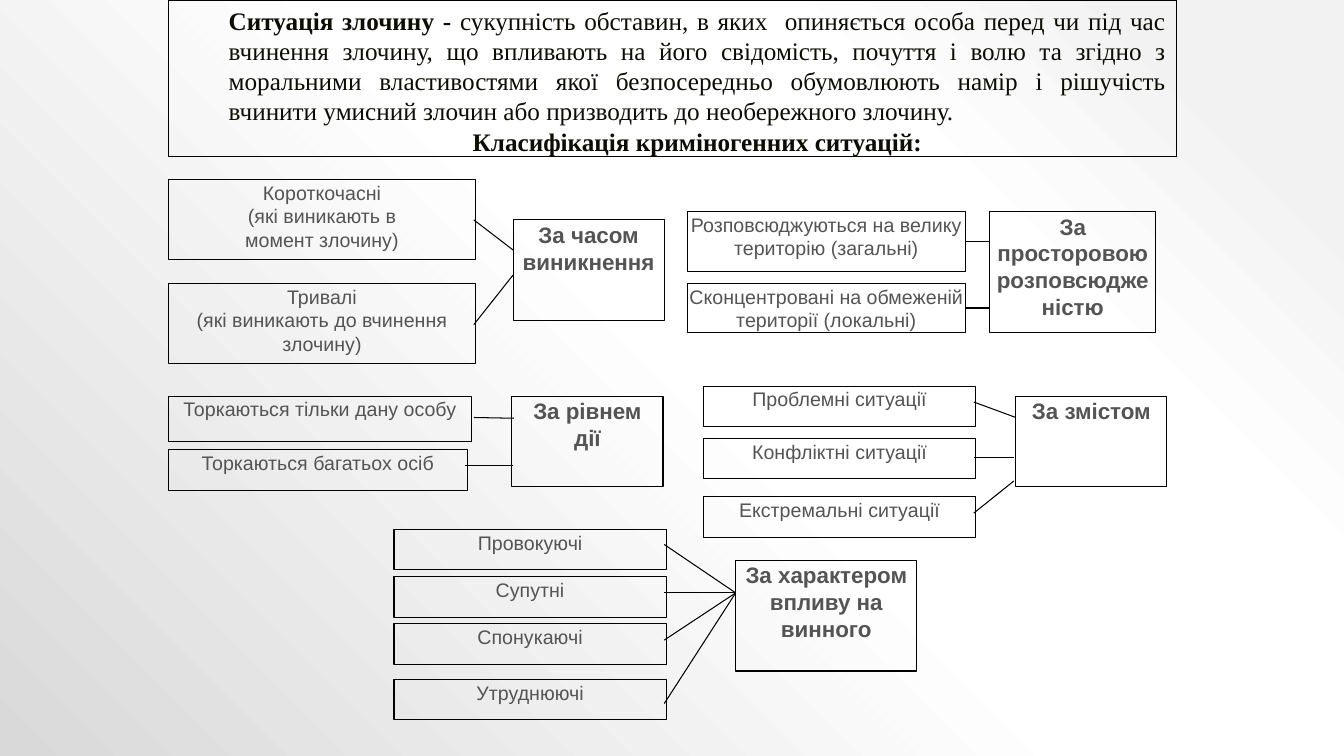
from pptx import Presentation
from pptx.dml.color import RGBColor
from pptx.enum import shapes, text
from pptx.oxml import parse_xml
from pptx.oxml.ns import nsdecls, qn
from pptx.oxml.xmlchemy import OxmlElement
from pptx.util import Cm, Pt

BLACK = RGBColor(0x00, 0x00, 0x00)
GRAY = RGBColor(0x54, 0x54, 0x54)
INK = RGBColor(0x0D, 0x0D, 0x03)
BACKDROP = [(10, "F2F2F2"), (28, "FFFFFF"), (48, "FFFFFF"), (100, "D9D9D9")]

TERM = "Ситуація злочину - "
DEFINITION = (
    "сукупність обставин, в яких  опиняється особа перед чи під час вчинення злочину, "
    "що впливають на його свідомість, почуття і волю та згідно з моральними "
    "властивостями якої безпосередньо обумовлюють намір і рішучість вчинити умисний "
    "злочин або призводить до необережного злочину."
)
SUBTITLE = "Класифікація криміногенних ситуацій:"

# Lengths in cm. heading: text, left, top, width, height
# kinds: text, left, top, width, height, line start (x, y), line end (x, y), line width in pt
# A line start of None is the middle of the right side of its box.
SMALL = (6.86, 1.02)
GROUPS = [
    (("За часом виникнення", 12.93, 5.54, 3.81, 2.54), [
        ("Короткочасні\n(які виникають в\nмомент злочину)", 4.24, 4.52, 7.75, 2.03,
         (11.94, 5.54), (12.93, 6.3), 0.75),
        ("Тривалі\n(які виникають до вчинення злочину)", 4.24, 7.14, 7.75, 2.03,
         (11.94, 8.18), (12.93, 6.93), 0.75),
    ]),
    (("За просторовою розповсюдженістю", 24.94, 5.33, 4.19, 3.05), [
        ("Розповсюджуються на велику територію (загальні)", 17.32, 5.33, 7.01, 1.52,
         None, (24.94, 6.09), 0.75),
        ("Сконцентровані на обмеженій території (локальні)", 17.32, 7.14, 7.01, 1.24,
         None, (24.94, 7.76), 1.5),
    ]),
    (("За рівнем\nдії", 12.9, 9.98, 3.81, 2.29), [
        ("Торкаються тільки дану особу", 4.24, 9.98, 7.65, 1.14,
         (11.94, 10.52), (12.95, 10.54), 0.75),
        ("Торкаються багатьох осіб", 4.24, 11.33, 7.54, 1.02,
         (11.73, 11.73), (12.93, 11.73), 0.75),
    ]),
    (("За змістом", 25.6, 9.98, 3.81, 2.29), [
        ("Проблемні ситуації", 17.73, 9.73, *SMALL, (24.54, 10.13), (25.6, 10.52), 0.75),
        ("Конфліктні ситуації", 17.73, 11.05, *SMALL, (24.54, 11.53), (25.55, 11.53), 0.75),
        ("Екстремальні ситуації", 17.73, 12.52, *SMALL, (24.54, 12.93), (25.55, 12.12), 0.75),
    ]),
    (("За характером впливу на винного", 18.54, 14.12, 4.57, 2.79), [
        (name, 9.93, top, *SMALL, (16.74, start), (18.54, 14.94), 0.75)
        for name, top, start in [
            ("Провокуючі", 13.34, 13.72),
            ("Супутні", 14.53, 14.94),
            ("Спонукаючі", 15.72, 16.13),
            ("Утруднюючі", 17.12, 17.73),
        ]
    ]),
]


def outline(shape, width=0.75):
    shape.line.color.rgb = BLACK
    shape.line.width = Pt(width)


def style(para, font, size, color, bold, align):
    para.alignment = align
    para.font.name = font
    para.font.size = Pt(size)
    para.font.color.rgb = color
    para.font.bold = bold


def paint_background(slide):
    slide.background.fill.solid()
    stops = "".join(f'<a:gs pos="{pos * 1000}"><a:srgbClr val="{color}"/></a:gs>'
                    for pos, color in BACKDROP)
    gradient = parse_xml(
        f'<a:gradFill {nsdecls("a")} rotWithShape="1"><a:gsLst>{stops}</a:gsLst>'
        '<a:path path="circle"><a:fillToRect l="100000" b="100000"/></a:path></a:gradFill>')
    properties = slide.element.find(".//" + qn("p:bgPr"))
    properties.replace(properties[0], gradient)


def add_definition(slide):
    title = slide.shapes.title
    title.left, title.top, title.width, title.height = Cm(4.24), Cm(0), Cm(25.4), Cm(3.94)
    outline(title)
    frame = title.text_frame
    frame.word_wrap = True
    frame.auto_size = text.MSO_AUTO_SIZE.NONE
    frame.vertical_anchor = text.MSO_ANCHOR.TOP
    definition, subtitle = frame.paragraphs[0], frame.add_paragraph()
    definition.add_run().text = TERM
    span = definition.add_run()
    span.text = DEFINITION
    subtitle.text = SUBTITLE
    for para, align in ((definition, text.PP_ALIGN.JUSTIFY), (subtitle, text.PP_ALIGN.CENTER)):
        style(para, "Times New Roman", 18, INK, True, align)
        para._p.get_or_add_pPr().set("marL", str(Cm(1.27)))
    span.font.bold = False


def add_box(slide, words, left, top, width, height, size, bold):
    box = slide.shapes.add_shape(
        shapes.MSO_SHAPE.RECTANGLE, Cm(left), Cm(top), Cm(width), Cm(height))
    box.shadow.inherit = False
    box.fill.background()
    outline(box)
    frame = box.text_frame
    frame.word_wrap = True
    frame.vertical_anchor = text.MSO_ANCHOR.TOP
    frame.margin_left = frame.margin_right = frame.margin_top = frame.margin_bottom = Cm(0.03)
    frame.text = words
    for para in frame.paragraphs:
        style(para, "Arial", size, GRAY, bold, text.PP_ALIGN.CENTER)
    return box


def add_link(slide, box, start, end, width):
    x, y = start or end
    link = slide.shapes.add_connector(
        shapes.MSO_CONNECTOR.STRAIGHT, Cm(x), Cm(y), Cm(end[0]), Cm(end[1]))
    if start is None:
        link.begin_connect(box, 3)
    outline(link, width)
    link._element.spPr.append(OxmlElement("a:effectLst"))


def main():
    deck = Presentation()
    deck.slide_width, deck.slide_height = Cm(33.87), Cm(19.05)
    slide = deck.slides.add_slide(deck.slide_layouts[5])
    paint_background(slide)
    add_definition(slide)
    for heading, kinds in GROUPS:
        add_box(slide, *heading, size=16, bold=True)
        for *kind, start, end, width in kinds:
            box = add_box(slide, *kind, size=14, bold=False)
            add_link(slide, box, start, end, width)
    deck.save("out.pptx")


if __name__ == "__main__":
    main()
